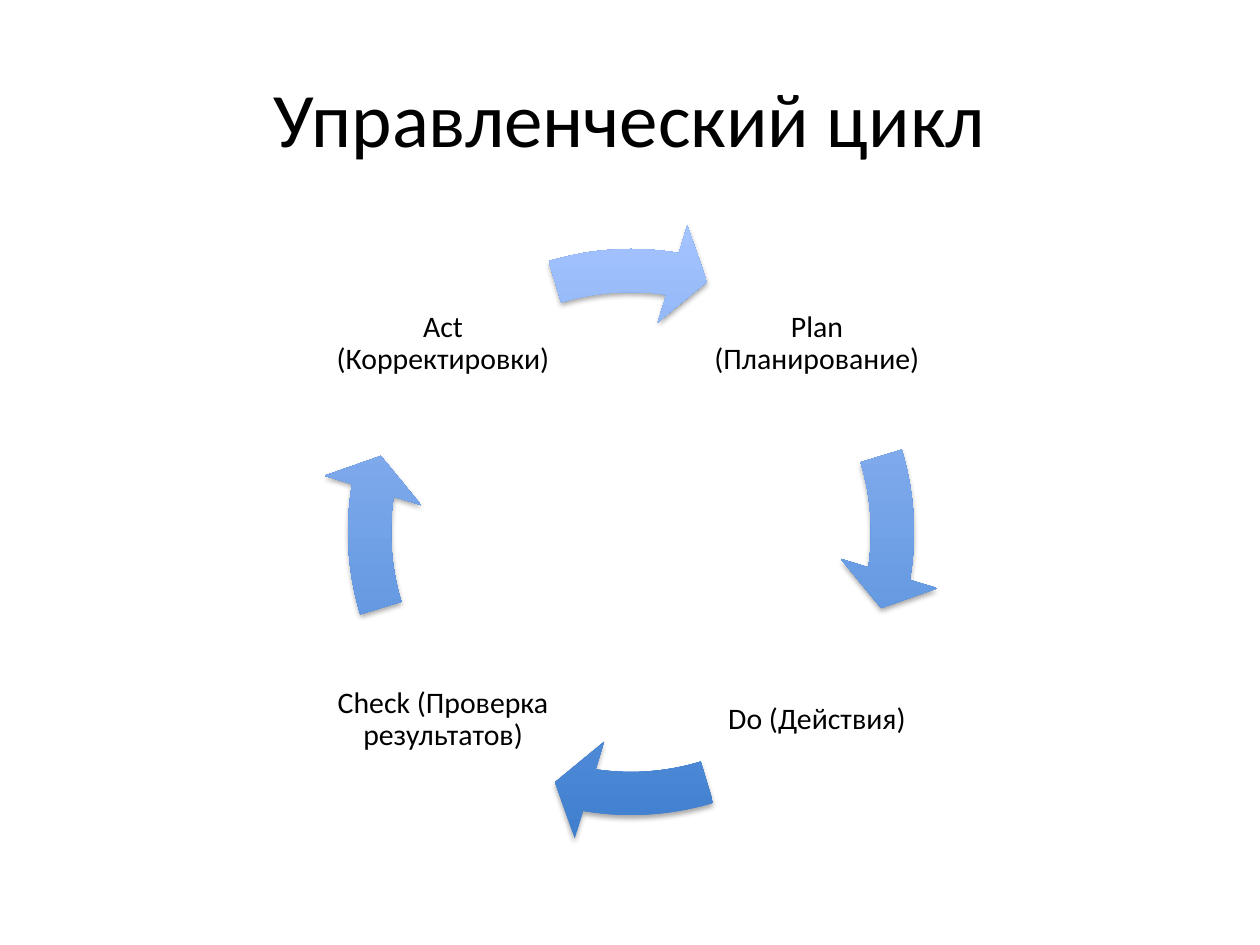
import pptx
import pptx.dml.color
import pptx.enum.shapes
import pptx.enum.text
import pptx.oxml
import pptx.util

PX = 914400 / 126
FONT = "Calibri"
SHADOW = (
    '<a:effectLst xmlns:a="http://schemas.openxmlformats.org/drawingml/2006/main">'
    '<a:outerShdw blurRad="40000" dist="23000" dir="5400000" rotWithShape="0">'
    '<a:srgbClr val="000000"><a:alpha val="35000"/></a:srgbClr>'
    '</a:outerShdw></a:effectLst>'
)


def px(*lengths):
    """Turn px lengths into EMU."""
    return [round(length * PX) for length in lengths]


def color(target, hex_string):
    target.rgb = pptx.dml.color.RGBColor.from_string(hex_string)


deck = pptx.Presentation()
deck.slide_width, deck.slide_height = px(1260, 945)
page = deck.slides.add_slide(deck.slide_layouts[5])

title = page.shapes.title
title.left, title.top, title.width, title.height = px(63, 38, 1134, 158)
title.text_frame.text = "Управленческий цикл"
title.text_frame.vertical_anchor = pptx.enum.text.MSO_ANCHOR.MIDDLE
title_para = title.text_frame.paragraphs[0]
title_para.alignment = pptx.enum.text.PP_ALIGN.CENTER
title_font = title_para.runs[0].font
title_font.name, title_font.size = FONT, pptx.util.Pt(44)
color(title_font.color, "000000")

# Clockwise from the top right: label and the corner of its box.
LEFT, RIGHT, TOP, BOTTOM = 333, 707, 234, 610
steps = [
    ("Plan (Планирование)", RIGHT, TOP),
    ("Do (Действия)", RIGHT, BOTTOM),
    ("Check (Проверка результатов)", LEFT, BOTTOM),
    ("Act (Корректировки)", LEFT, TOP),
]
QUARTER, FULL_TURN = 54, 216  # angles in adjustment units

for index, (label, left, top) in enumerate(steps):
    box = page.shapes.add_textbox(*px(left, top, 220, 220))
    frame = box.text_frame
    frame.word_wrap = True
    frame.vertical_anchor = pptx.enum.text.MSO_ANCHOR.MIDDLE
    frame.margin_left = frame.margin_right = px(3)[0]
    frame.margin_top = frame.margin_bottom = px(3)[0]
    frame.text = label
    para = frame.paragraphs[0]
    para.alignment = pptx.enum.text.PP_ALIGN.CENTER
    para.line_spacing = 0.9
    font = para.runs[0].font
    font.name, font.size = FONT, pptx.util.Pt(17)
    color(font.color, "000000")

    arrow = page.shapes.add_shape(
        pptx.enum.shapes.MSO_SHAPE.CIRCULAR_ARROW, *px(319, 220, 624, 624))
    turn = index * QUARTER
    settings = [0.069, 4.654, 5.49 + turn, (205.855 + turn) % FULL_TURN, 0.081]
    for number, setting in enumerate(settings):
        arrow.adjustments[number] = setting
    arrow.line.fill.background()
    arrow.fill.gradient()
    arrow.fill.gradient_angle = 90
    for stop, shade in zip(arrow.fill.gradient_stops, ["3F7FCE", "A4C4FF"]):
        color(stop.color, shade)
        stop.position = 0 if shade == "3F7FCE" else 1
    arrow._element.spPr.append(pptx.oxml.parse_xml(SHADOW))

deck.save("out.pptx")
